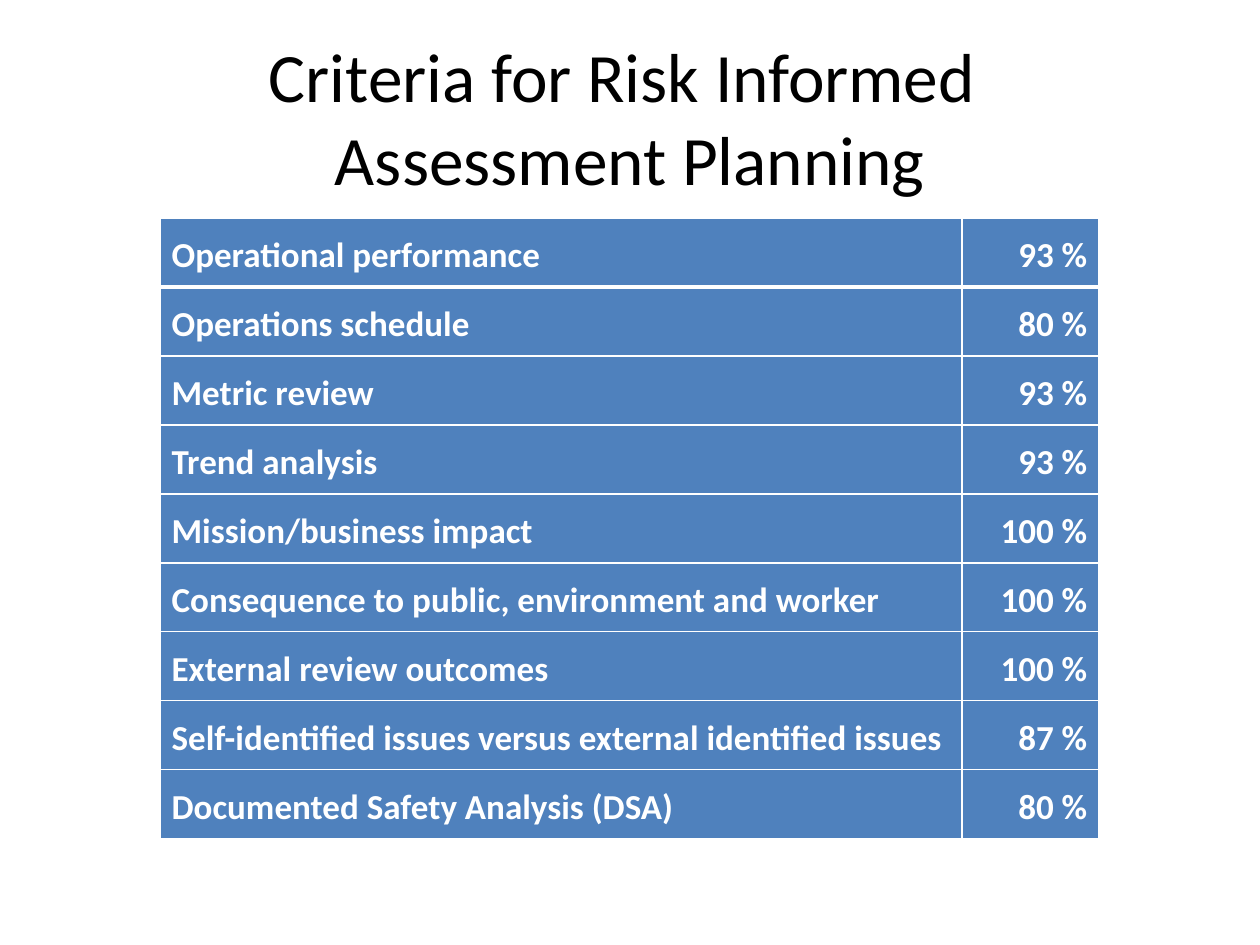
from dataclasses import dataclass

from lxml.etree import SubElement
from pptx import Presentation
from pptx.dml.color import RGBColor
from pptx.enum.text import MSO_ANCHOR, PP_ALIGN
from pptx.oxml.ns import qn
from pptx.util import Cm, Pt

WHITE, BLACK, BLUE = "FFFFFF", "000000", "4F81BD"
TITLE_FONT = {"name": "Calibri", "size": Pt(39.6), "bold": False}
CELL_FONT = {"name": "Calibri", "size": Pt(20), "bold": True}
CELL_FORMAT = {
    "vertical_anchor": MSO_ANCHOR.MIDDLE,
    "margin_left": Cm(0.23), "margin_right": Cm(0.23),
    "margin_top": Cm(0.1), "margin_bottom": Cm(0.1),
}
COLUMN_WIDTHS = Cm(16.16), Cm(2.76)
ROW_HEIGHT = Cm(1.39)


@dataclass
class Criterion:
    name: str
    percent: int


CRITERIA = [
    Criterion("Operational performance", 93),
    Criterion("Operations schedule", 80),
    Criterion("Metric review", 93),
    Criterion("Trend analysis", 93),
    Criterion("Mission/business impact", 100),
    Criterion("Consequence to public, environment and worker", 100),
    Criterion("External review outcomes", 100),
    Criterion("Self-identified issues versus external identified issues", 87),
    Criterion("Documented Safety Analysis (DSA)", 80),
]


def color(value: str) -> RGBColor:
    return RGBColor.from_string(value)


def apply(target, values: dict) -> None:
    for name, value in values.items():
        setattr(target, name, value)


def style_paragraph(p, font: dict, font_color: str, align) -> None:
    p.alignment = align
    for r in p.runs:
        apply(r.font, font)
        r.font.color.rgb = color(font_color)


def set_borders(cell, top: float, bottom: float) -> None:
    tc_pr = cell._tc.get_or_add_tcPr()
    for side, width in {"L": 1, "R": 1, "T": top, "B": bottom}.items():
        ln = SubElement(tc_pr, qn(f"a:ln{side}"), w=str(Pt(width)))
        fill = SubElement(ln, qn("a:solidFill"))
        SubElement(fill, qn("a:srgbClr"), val=WHITE)


def fill_cell(cell, text: str, align, top: float, bottom: float) -> None:
    apply(cell, CELL_FORMAT)
    set_borders(cell, top, bottom)
    cell.fill.solid()
    cell.fill.fore_color.rgb = color(BLUE)
    cell.text = text
    p = cell.text_frame.paragraphs[0]
    p.line_spacing = 1.15
    style_paragraph(p, CELL_FONT, WHITE, align)


def add_title(s) -> None:
    tf = s.shapes.add_textbox(Cm(1.27), Cm(0.76), Cm(22.86), Cm(3.18)).text_frame
    apply(tf, {"word_wrap": True, "vertical_anchor": MSO_ANCHOR.MIDDLE})
    p = tf.paragraphs[0]
    p.text = "Criteria for Risk Informed \vAssessment Planning"
    style_paragraph(p, TITLE_FONT, BLACK, PP_ALIGN.CENTER)


def add_criteria_table(s) -> None:
    table = s.shapes.add_table(
        len(CRITERIA), len(COLUMN_WIDTHS), Cm(3.23), Cm(4.4),
        sum(COLUMN_WIDTHS), ROW_HEIGHT * len(CRITERIA)).table
    for column, width in zip(table.columns, COLUMN_WIDTHS):
        column.width = width
    for i, criterion in enumerate(CRITERIA):
        table.rows[i].height = ROW_HEIGHT
        # A thicker rule separates the first row from the rest
        top, bottom = 3 if i == 1 else 1, 3 if i == 0 else 1
        fill_cell(table.cell(i, 0), criterion.name, PP_ALIGN.LEFT, top, bottom)
        fill_cell(table.cell(i, 1), f"{criterion.percent} %", PP_ALIGN.RIGHT, top, bottom)


def main() -> None:
    prs = Presentation()
    prs.slide_width, prs.slide_height = Cm(25.4), Cm(19.05)
    s = prs.slides.add_slide(prs.slide_layouts[6])
    add_title(s)
    add_criteria_table(s)
    prs.save("out.pptx")


if __name__ == "__main__":
    main()
